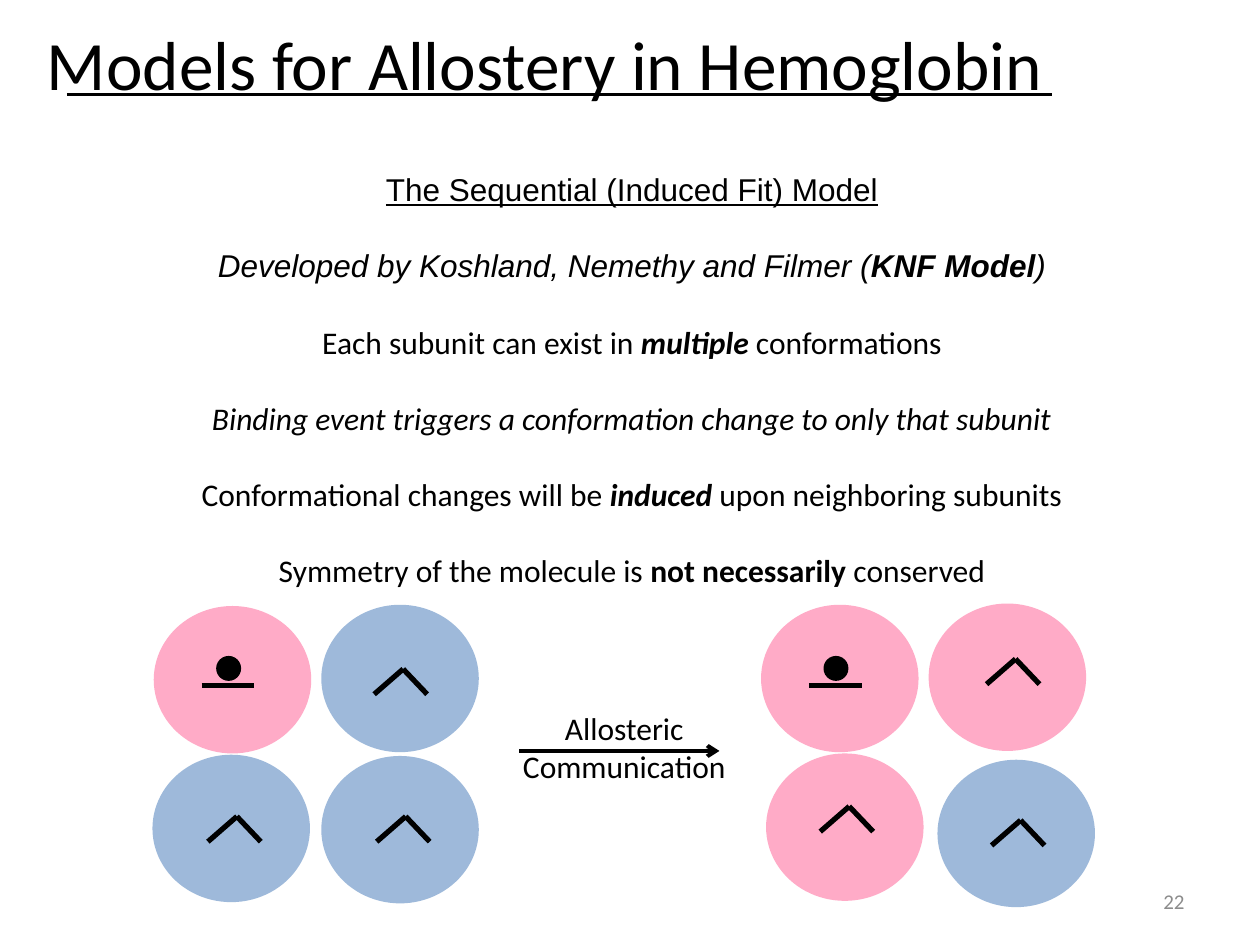
from lxml import etree
from pptx import Presentation
from pptx.dml.color import RGBColor
from pptx.enum.shapes import MSO_CONNECTOR as Link, MSO_SHAPE as Form
from pptx.enum.text import MSO_ANCHOR as Anchor, PP_ALIGN as Align
from pptx.oxml.ns import qn
from pptx.util import Inches, Pt

BLACK = RGBColor(0, 0, 0)
GRAY = RGBColor(0x8C, 0x8C, 0x8C)
WHITE = RGBColor(255, 255, 255)
PINK = RGBColor(0xFF, 0x66, 0x99)
BLUE = RGBColor(0x4F, 0x81, 0xBD)

PLAIN = {}
BOLD = {"bold": True}
SLANT = {"italic": True}
STRONG = {"bold": True, "italic": True}
ARIAL = {"name": "Arial"}

POINTS = [
    [("The Sequential (Induced Fit) Model", {**ARIAL, "underline": True})],
    [("Developed by Koshland, Nemethy and Filmer (", {**ARIAL, **SLANT}),
     ("KNF Model", {**ARIAL, **STRONG}), (")", {**ARIAL, **SLANT})],
    [("Each subunit can exist in ", PLAIN), ("multiple", STRONG),
     (" conformations", PLAIN)],
    [("Binding event triggers a conformation change to only that subunit", SLANT)],
    [("Conformational changes will be ", PLAIN), ("induced", STRONG),
     (" upon neighboring subunits", PLAIN)],
    [("Symmetry of the molecule is ", PLAIN), ("not necessarily ", BOLD),
     ("conserved", PLAIN)],
]


def add_text(slide, box, paras, size=18, color=BLACK, align=Align.CENTER,
             anchor=Anchor.TOP, wrap=True, gap=0):
    shape = slide.shapes.add_textbox(*map(Inches, box))
    frame = shape.text_frame
    frame.word_wrap = wrap
    frame.vertical_anchor = anchor
    for i, runs in enumerate(paras):
        para = frame.add_paragraph() if i else frame.paragraphs[0]
        para.alignment = align
        if i:
            para.space_before = Pt(gap)
        for words, style in runs:
            run = para.add_run()
            run.text = words
            look = {"name": "Calibri", "size": Pt(size), **style}
            for key, value in look.items():
                setattr(run.font, key, value)
            run.font.color.rgb = color
    return shape


def add_line(shapes, x1, y1, x2, y2, width=3, arrow=False):
    line = shapes.add_connector(Link.STRAIGHT, *map(Inches, (x1, y1, x2, y2)))
    line.line.color.rgb = BLACK
    line.line.width = Pt(width)
    if arrow:
        tail = etree.SubElement(line.line._get_or_add_ln(), qn("a:tailEnd"))
        tail.set("type", "arrow")
    etree.SubElement(line._element.spPr, qn("a:effectLst"))


def add_oval(slide, box, color, alpha=None):
    oval = slide.shapes.add_shape(Form.OVAL, *map(Inches, box))
    oval.shadow.inherit = False
    oval.fill.solid()
    oval.fill.fore_color.rgb = color
    if alpha:
        tint = oval._element.spPr.find(qn("a:solidFill"))[0]
        etree.SubElement(tint, qn("a:alpha")).set("val", str(alpha * 1000))
        oval.line.fill.background()
    else:
        oval.line.color.rgb = color
        oval.line.width = Pt(2)


def empty_site(slide, x, y):
    group = slide.shapes.add_group_shape()
    add_line(group.shapes, x, y, x + 0.23, y - 0.2)
    add_line(group.shapes, x + 0.23, y - 0.2, x + 0.42, y)


def bound_site(slide, x, y):
    add_line(slide.shapes, x, y, x + 0.42, y)
    add_oval(slide, (x + 0.13, y - 0.22, 0.17, 0.17), BLACK)


def add_cells(slide, left, top, cells):
    for x, y, color, site, dx, dy in cells:
        add_oval(slide, (left + x, top + y, 1.25, 1.17), color, 55)
        site(slide, left + x + dx, top + y + dy)


def add_title(slide, left, top, width, height):
    shape = add_text(slide, (left, top, width, height),
                     [[("Models for Allostery in Hemoglobin", PLAIN)]],
                     size=39.6, anchor=Anchor.MIDDLE)
    shape.fill.solid()
    shape.fill.fore_color.rgb = WHITE
    add_line(slide.shapes, left + 0.36, top + 0.47, left + 8.18, top + 0.47, 1.5)


def add_step(slide, left, top, width, height):
    y = top + 0.38
    add_line(slide.shapes, left + 0.08, y, left + 1.67, y, 2.25, True)
    add_text(slide, (left, top, width, height),
             [[("Allosteric", PLAIN)], [("Communication", PLAIN)]], wrap=False)


def main():
    deck = Presentation()
    deck.slide_width, deck.slide_height = Inches(10), Inches(7.5)
    slide = deck.slides.add_slide(deck.slide_layouts[6])
    add_title(slide, 0.17, 0.28, 8.31, 0.43)
    add_text(slide, (7.17, 6.95, 2.33, 0.4), [[("22", PLAIN)]], size=12,
             color=GRAY, align=Align.RIGHT, anchor=Anchor.MIDDLE)
    add_text(slide, (0.86, 1.3, 8.31, 3.43), POINTS, gap=22)
    add_cells(slide, 1.21, 4.8, [
        (0.01, 0.01, PINK, bound_site, 0.38, 0.63),
        (1.34, 0, BLUE, empty_site, 0.42, 0.71),
        (0, 1.19, BLUE, empty_site, 0.44, 0.69),
        (1.34, 1.2, BLUE, empty_site, 0.44, 0.68),
    ])
    add_step(slide, 4.04, 5.58, 1.83, 0.71)
    add_cells(slide, 6.04, 4.79, [
        (0, 0.01, PINK, bound_site, 0.38, 0.64),
        (1.33, 0, PINK, empty_site, 0.46, 0.64),
        (0.04, 1.19, PINK, empty_site, 0.43, 0.62),
        (1.4, 1.24, BLUE, empty_site, 0.43, 0.68),
    ])
    deck.save("out.pptx")


if __name__ == "__main__":
    main()
